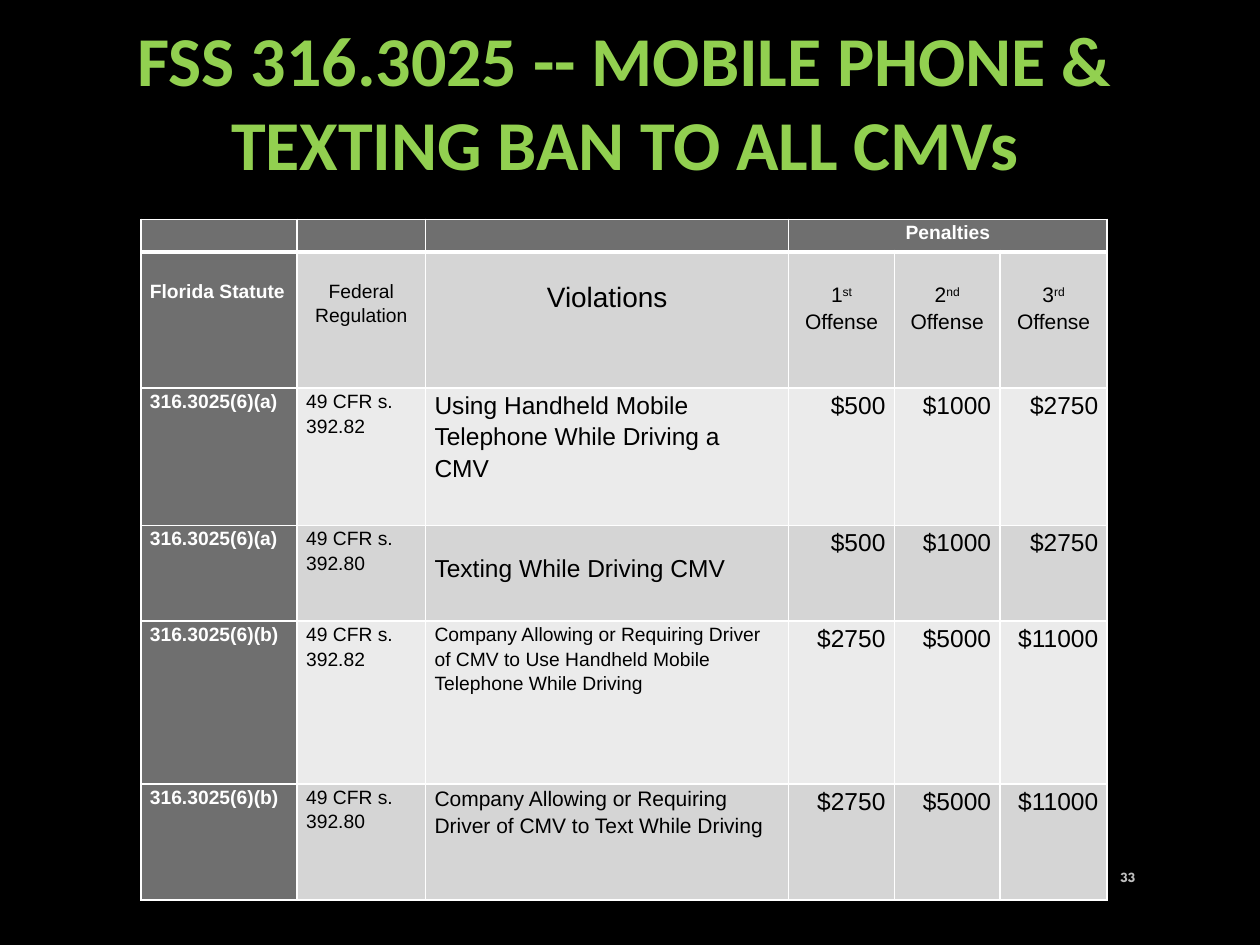
import pptx
import pptx.dml.color
import pptx.enum.text
import pptx.oxml
import pptx.oxml.ns
import pptx.util

Cm = pptx.util.Cm
Pt = pptx.util.Pt
ALIGN = pptx.enum.text.PP_ALIGN
ANCHOR = pptx.enum.text.MSO_ANCHOR

COLORS = {
    "background": "000000",
    "title": "92D050",
    "number": "BFBFBF",
    "head": "6F6F6F",
    "dark_band": "D5D5D5",
    "light_band": "EBEBEB",
    "border": "FFFFFF",
    "head_text": "FFFFFF",
    "text": "000000",
}
COL_WIDTHS = [3.15, 2.59, 7.32, 2.13, 2.13, 2.16]
ROW_HEIGHTS = [0.66, 2.74, 2.77, 1.93, 3.28, 2.34]
OFFENSES = [("1", "st"), ("2", "nd"), ("3", "rd")]
DRIVER_FINES = ["$500", "$1000", "$2750"]
COMPANY_FINES = ["$2750", "$5000", "$11000"]
VIOLATIONS = [
    ("316.3025(6)(a)", "49 CFR s. 392.82",
     "Using Handheld Mobile Telephone While Driving a CMV", 14, 0, DRIVER_FINES),
    ("316.3025(6)(a)", "49 CFR s. 392.80",
     "Texting While Driving CMV", 14, 0.52, DRIVER_FINES),
    ("316.3025(6)(b)", "49 CFR s. 392.82",
     "Company Allowing or Requiring Driver of CMV to Use Handheld Mobile "
     "Telephone While Driving", 11, 0, COMPANY_FINES),
    ("316.3025(6)(b)", "49 CFR s. 392.80",
     "Company Allowing or Requiring Driver of CMV to Text While Driving",
     12, 0, COMPANY_FINES),
]


def rgb(name):
    return pptx.dml.color.RGBColor.from_string(COLORS[name])


def place(sp, box):
    sp.left, sp.top, sp.width, sp.height = (Cm(v) for v in box)


def format_runs(p, size, color, bold=False, font="Arial"):
    for r in p.runs:
        r.font.name = font
        r.font.size = Pt(size)
        r.font.bold = bold
        r.font.color.rgb = rgb(color)


def set_borders(cell, bottom):
    tc_pr = cell._tc.get_or_add_tcPr()
    sides = [("lnL", 1), ("lnR", 1), ("lnT", 1), ("lnB", bottom)]
    for i, (side, width) in enumerate(sides):
        tc_pr.insert(i, pptx.oxml.parse_xml(
            f'<a:{side} {pptx.oxml.ns.nsdecls("a")} w="{Pt(width)}">'
            f'<a:solidFill><a:srgbClr val="{COLORS["border"]}"/></a:solidFill>'
            f'</a:{side}>'))


def fill_cell(cell, parts, size, align=ALIGN.LEFT, head=False, gap=0):
    cell.margin_top = Cm(gap)
    p = cell.text_frame.paragraphs[0]
    p.alignment = align
    p.line_spacing = 1.15
    for i, part in enumerate(parts):
        r = p.add_run()
        r.text = part
        if i == 1:
            r.font._element.set("baseline", "30000")
    format_runs(p, size, "head_text" if head else "text", head)


def add_title(slide, box):
    sp = slide.shapes.title
    place(sp, box)
    tf = sp.text_frame
    tf.text = "FSS 316.3025 -- MOBILE PHONE & TEXTING BAN TO ALL CMVs"
    tf.word_wrap = True
    tf.auto_size = pptx.enum.text.MSO_AUTO_SIZE.NONE
    tf.vertical_anchor = ANCHOR.TOP
    p = tf.paragraphs[0]
    p.alignment = ALIGN.CENTER
    format_runs(p, 40, "title", True, "Calibri")


def add_number(slide, box):
    sp = slide.shapes.add_textbox(*(Cm(v) for v in box))
    tf = sp.text_frame
    tf.text = "33"
    tf.word_wrap = True
    tf.vertical_anchor = ANCHOR.MIDDLE
    p = tf.paragraphs[0]
    p.alignment = ALIGN.RIGHT
    format_runs(p, 8, "number", True, "League Spartan")


def style_grid(table):
    table.first_row = table.horz_banding = False
    for i, row in enumerate(table.rows):
        row.height = Cm(ROW_HEIGHTS[i])
        for j, cell in enumerate(row.cells):
            cell.margin_left = cell.margin_right = Cm(0.18)
            cell.margin_top = cell.margin_bottom = 0
            band = "dark_band" if i % 2 else "light_band"
            cell.fill.solid()
            cell.fill.fore_color.rgb = rgb("head" if i == 0 or j == 0 else band)
            set_borders(cell, 3 if i == 0 else 1)
            if i == 0 and j != 3:
                p = cell.text_frame.paragraphs[0]
                p._p.append(pptx.oxml.parse_xml(
                    f'<a:endParaRPr {pptx.oxml.ns.nsdecls("a")} sz="1100"/>'))


def add_penalty_table(slide, left, top):
    frame = slide.shapes.add_table(
        len(ROW_HEIGHTS), len(COL_WIDTHS), Cm(left), Cm(top),
        Cm(sum(COL_WIDTHS)), Cm(sum(ROW_HEIGHTS)))
    table = frame.table
    for column, width in zip(table.columns, COL_WIDTHS):
        column.width = Cm(width)
    style_grid(table)

    table.cell(0, 3).merge(table.cell(0, 5))
    fill_cell(table.cell(0, 3), ["Penalties"], 11, ALIGN.CENTER, True)
    fill_cell(table.cell(1, 0), ["Florida Statute"], 11, head=True, gap=0.52)
    fill_cell(table.cell(1, 1), ["Federal Regulation"], 11, ALIGN.CENTER, gap=0.52)
    fill_cell(table.cell(1, 2), ["Violations"], 16, ALIGN.CENTER, gap=0.52)
    for j, (digit, suffix) in enumerate(OFFENSES, 3):
        fill_cell(table.cell(1, j), [digit, suffix, " Offense"], 12,
                  ALIGN.CENTER, gap=0.56)

    for i, (statute, rule, violation, size, gap, fines) in enumerate(VIOLATIONS, 2):
        fill_cell(table.cell(i, 0), [statute], 11, head=True)
        fill_cell(table.cell(i, 1), [rule], 11)
        fill_cell(table.cell(i, 2), [violation], size, gap=gap)
        for j, fine in enumerate(fines, 3):
            fill_cell(table.cell(i, j), [fine], 14, ALIGN.RIGHT)


def main():
    prs = pptx.Presentation()
    prs.slide_width, prs.slide_height = Cm(25.4), Cm(19.05)
    slide = prs.slides.add_slide(prs.slide_layouts[5])
    slide.background.fill.solid()
    slide.background.fill.fore_color.rgb = rgb("background")
    add_number(slide, (22, 17.17, 1.14, 1.02))
    add_title(slide, (0.43, 0.2, 24.33, 5.21))
    add_penalty_table(slide, 2.84, 4.42)
    prs.save("out.pptx")


if __name__ == "__main__":
    main()
